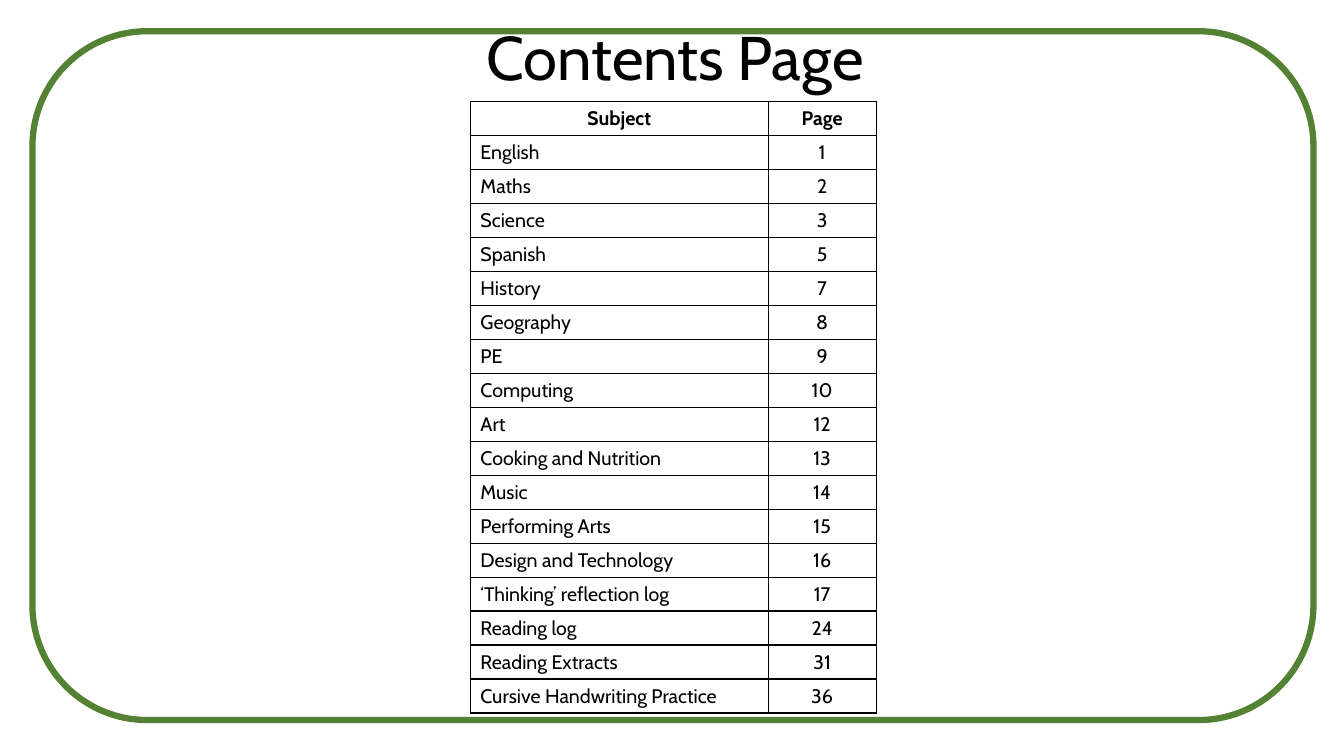
from lxml.etree import SubElement
from pptx import Presentation
from pptx.dml.color import RGBColor
from pptx.enum.shapes import MSO_SHAPE as Shape
from pptx.enum.text import MSO_ANCHOR as Anchor, PP_ALIGN as Align
from pptx.oxml.ns import qn
from pptx.util import Pt

COLORS = {"text": "000000", "rule": "000000", "frame": "548235", "paper": "FFFFFF"}

CONTENTS = [
    ("English", 1), ("Maths", 2), ("Science", 3), ("Spanish", 5),
    ("History", 7), ("Geography", 8), ("PE", 9), ("Computing", 10),
    ("Art", 12), ("Cooking and Nutrition", 13), ("Music", 14),
    ("Performing Arts", 15), ("Design and Technology", 16),
    ("‘Thinking’ reflection log", 17), ("Reading log", 24),
    ("Reading Extracts", 31), ("Cursive Handwriting Practice", 36),
]
FIRST_FILLED_ROW = 14


class ContentsSlide:
    font_name = "Cabin"

    def __init__(self, slide):
        self.slide = slide

    def color(self, name):
        return RGBColor.from_string(COLORS[name])

    def add_text(self, text_frame, text, size, align, bold=False):
        paragraph = text_frame.paragraphs[0]
        paragraph.alignment = align
        run = paragraph.add_run()
        run.text = text
        run.font.name = self.font_name
        run.font.size = Pt(size)
        run.font.bold = bold
        run.font.color.rgb = self.color("text")
        return paragraph

    def title(self, text, left, top, width, height):
        heading = self.slide.shapes.title
        heading.left, heading.top = Pt(left), Pt(top)
        heading.width, heading.height = Pt(width), Pt(height)
        heading.text_frame.vertical_anchor = Anchor.MIDDLE
        self.add_text(heading.text_frame, text, 44, Align.CENTER).line_spacing = 0.9

    def frame(self, left, top, width, height):
        border = self.slide.shapes.add_shape(
            Shape.ROUNDED_RECTANGLE, Pt(left), Pt(top), Pt(width), Pt(height))
        border.shadow.inherit = False
        border.fill.background()
        border.line.color.rgb = self.color("frame")
        border.line.width = Pt(4.5)

    def cell_borders(self, cell):
        properties = cell._tc.get_or_add_tcPr()
        for side in ("a:lnL", "a:lnR", "a:lnT", "a:lnB"):
            rule = SubElement(properties, qn(side), w=str(Pt(1)))
            fill = SubElement(rule, qn("a:solidFill"))
            SubElement(fill, qn("a:srgbClr"), val=COLORS["rule"])

    def table(self, rows, left, top, column_widths, row_height):
        contents = self.slide.shapes.add_table(
            len(rows), len(column_widths), Pt(left), Pt(top),
            Pt(sum(column_widths)), Pt(row_height * len(rows))).table
        for column, width in zip(contents.columns, column_widths):
            column.width = Pt(width)
        for r, entries in enumerate(rows):
            contents.rows[r].height = Pt(row_height)
            for c, entry in enumerate(entries):
                cell = contents.cell(r, c)
                is_subject = r > 0 and c == 0
                self.add_text(cell.text_frame, str(entry), 14,
                              Align.LEFT if is_subject else Align.CENTER, bold=r == 0)
                self.cell_borders(cell)
                if r >= FIRST_FILLED_ROW:
                    cell.fill.solid()
                    cell.fill.fore_color.rgb = self.color("paper")
                else:
                    cell.fill.background()


def main():
    deck = Presentation()
    deck.slide_width, deck.slide_height = Pt(960), Pt(540)
    title_only = deck.slide_layouts[5]
    page = ContentsSlide(deck.slides.add_slide(title_only))

    # Heading and green frame
    page.title("Contents Page", 68.4, 2.2, 828, 82)
    page.frame(23.2, 22.3, 915, 492)

    # Subjects with their page numbers
    page.table([("Subject", "Page")] + CONTENTS, 336, 72.5, (212.7, 77.2), 24.08)

    deck.save("out.pptx")


if __name__ == "__main__":
    main()
